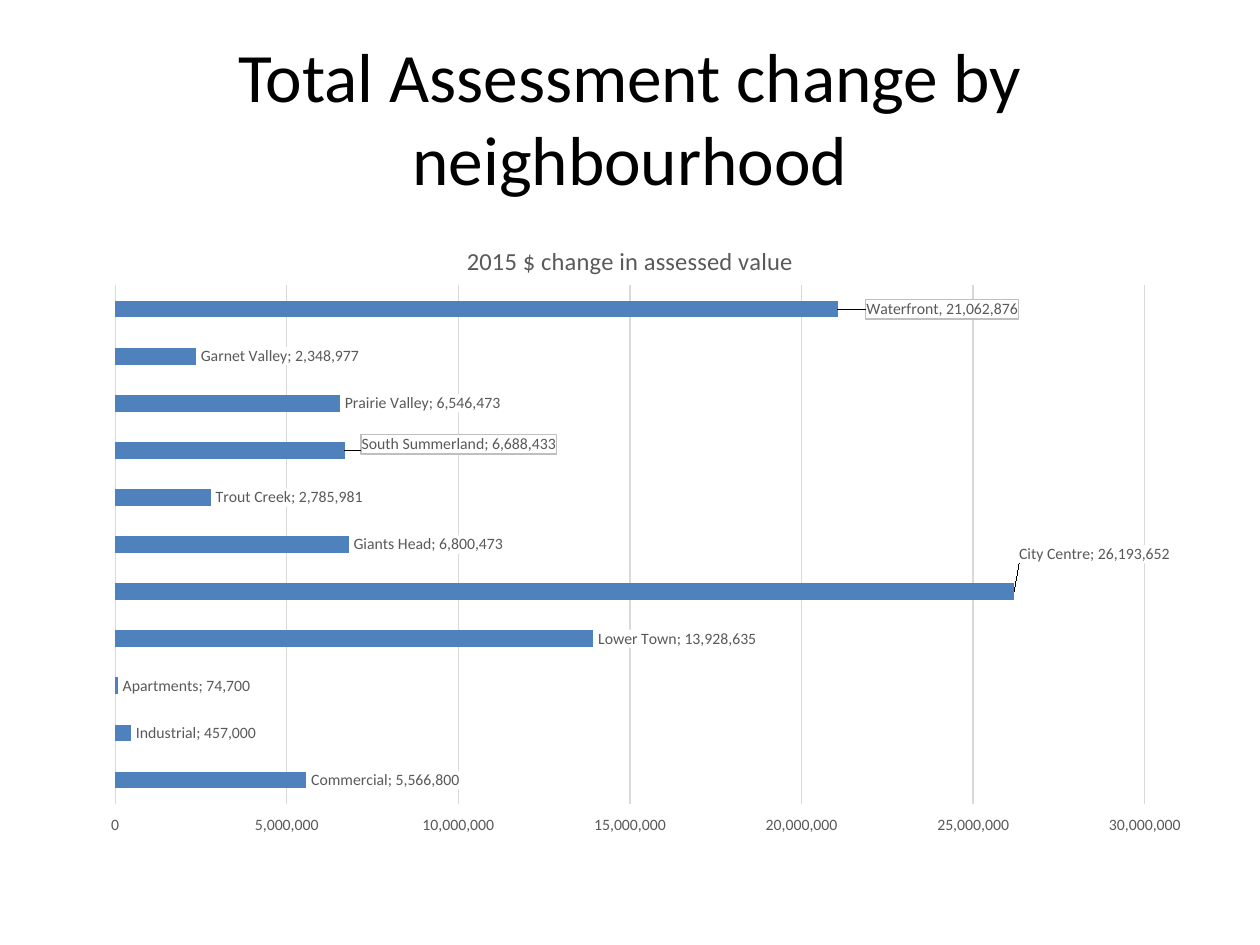
import dataclasses
import pptx
import pptx.chart.data
import pptx.dml.color
import pptx.enum.chart
import pptx.enum.text
import pptx.oxml
import pptx.oxml.ns
import pptx.util

Cm, Pt = pptx.util.Cm, pptx.util.Pt
Rgb = pptx.dml.color.RGBColor.from_string
enum = pptx.enum.chart
NS = pptx.oxml.ns.nsdecls("c", "a")

VALUES = {
    "Commercial": 5566800, "Industrial": 457000, "Apartments": 74700,
    "Lower Town": 13928635, "City Centre": 26193652, "Giants Head": 6800473,
    "Trout Creek": 2785981, "South Summerland": 6688433,
    "Prairie Valley": 6546473, "Garnet Valley": 2348977, "Waterfront": 21062876,
}
# Label shifts as shares of the chart size, and whether the label is boxed
MOVED = {
    "City Centre": (0, -0.06, False),
    "South Summerland": (0.01, -0.01, True),
    "Waterfront": (0.02, 0, True),
}
TYPED = {"Waterfront": "Waterfront, 21,062,876"}


@dataclasses.dataclass
class Theme:
    font: str = "Calibri"
    ink: str = "000000"
    gray: str = "595959"
    grid: str = "D9D9D9"
    edge: str = "BFBFBF"
    bar: str = "4F81BD"
    back: str = "FFFFFF"
    head: float = 39.6
    name: float = 14
    label: float = 9
    number: str = "#,##0"


class Deck:
    def __init__(self, theme):
        self.theme = theme
        self.show = pptx.Presentation()
        self.show.slide_width, self.show.slide_height = Cm(25.4), Cm(19.05)
        self.slide = self.show.slides.add_slide(self.show.slide_layouts[5])

    def style(self, font, size, color):
        font.name, font.size, font.bold = self.theme.font, Pt(size), False
        font.color.rgb = Rgb(color)

    def title(self, text, left, top, width, height):
        box = self.slide.shapes.title
        box.left, box.top, box.width, box.height = map(Cm, (left, top, width, height))
        frame = box.text_frame
        frame.text = text
        frame.vertical_anchor = pptx.enum.text.MSO_ANCHOR.MIDDLE
        line = frame.paragraphs[0]
        line.alignment = pptx.enum.text.PP_ALIGN.CENTER
        self.style(line.font, self.theme.head, self.theme.ink)

    def chart(self, title, values, left, top, width, height):
        theme = self.theme
        data = pptx.chart.data.CategoryChartData(number_format=theme.number)
        data.categories = list(values)
        data.add_series("Series 1", list(values.values()))
        chart = self.slide.shapes.add_chart(
            enum.XL_CHART_TYPE.BAR_CLUSTERED,
            *map(Cm, (left, top, width, height)), data).chart
        self.style(chart.font, 10, theme.ink)
        chart.has_legend = False
        chart.has_title = True
        chart.chart_title.text_frame.text = title
        self.style(chart.chart_title.text_frame.paragraphs[0].font, theme.name, theme.gray)
        self.axes(chart)
        self.place(chart, 0.046, 0.104, 0.908, 0.831)
        plot = chart.plots[0]
        plot.gap_width, plot.vary_by_categories = 182, False
        bars = plot.series[0]
        bars.format.fill.solid()
        bars.format.fill.fore_color.rgb = Rgb(theme.bar)
        self.labels(bars, list(values))

    def axes(self, chart):
        chart.category_axis.visible = False
        axis = chart.value_axis
        axis.minimum_scale, axis.maximum_scale, axis.major_unit = 0, 30e6, 5e6
        axis.major_tick_mark = enum.XL_TICK_MARK.OUTSIDE
        axis.format.line.fill.background()
        axis.has_major_gridlines = True
        line = axis.major_gridlines.format.line
        line.color.rgb, line.width = Rgb(self.theme.grid), Pt(0.75)
        axis.tick_labels.number_format = self.theme.number
        axis.tick_labels.number_format_is_linked = False
        self.style(axis.tick_labels.font, self.theme.label, self.theme.gray)

    def place(self, chart, left, top, width, height):
        """Fix the inner plot area, in shares of the chart size."""
        area = chart._chartSpace.xpath("c:chart/c:plotArea")[0]
        for old in area.xpath("c:layout"):
            area.remove(old)
        area.insert(0, pptx.oxml.parse_xml(
            f'<c:layout {NS}><c:manualLayout><c:layoutTarget val="inner"/>'
            f'<c:xMode val="edge"/><c:yMode val="edge"/><c:x val="{left}"/>'
            f'<c:y val="{top}"/><c:w val="{width}"/><c:h val="{height}"/>'
            '</c:manualLayout></c:layout>'))

    def labels(self, bars, names):
        theme = self.theme
        marks = bars.data_labels
        marks.show_value = marks.show_category_name = True
        marks.number_format, marks.number_format_is_linked = theme.number, False
        marks.position = enum.XL_LABEL_POSITION.OUTSIDE_END
        self.style(marks.font, theme.label, theme.gray)
        self.finish(marks._element, False)
        for name, (right, down, boxed) in MOVED.items():
            spot = names.index(name)
            mark = bars.points[spot].data_label
            if name in TYPED:
                mark.text_frame.text = TYPED[name]
                self.style(mark.text_frame.paragraphs[0].font, theme.label, theme.gray)
            else:
                self.style(mark.font, theme.label, theme.gray)
            mark.position = enum.XL_LABEL_POSITION.OUTSIDE_END
            node = marks._element.xpath(f'c:dLbl[c:idx/@val="{spot}"]')[0]
            node.xpath("c:showCatName")[0].set("val", "1")
            node.xpath("c:idx")[0].addnext(pptx.oxml.parse_xml(
                f'<c:layout {NS}><c:manualLayout><c:x val="{right}"/>'
                f'<c:y val="{down}"/></c:manualLayout></c:layout>'))
            self.finish(node, boxed)

    def finish(self, node, boxed):
        """Give a label node its fill, border and separator."""
        theme = self.theme
        for old in node.xpath("c:spPr | c:separator"):
            node.remove(old)
        edge = (f'<a:ln w="9525"><a:solidFill><a:srgbClr val="{theme.edge}"/>'
                '</a:solidFill></a:ln>' if boxed else '<a:ln><a:noFill/></a:ln>')
        look = pptx.oxml.parse_xml(
            f'<c:spPr {NS}><a:solidFill><a:srgbClr val="{theme.back}"/>'
            f'</a:solidFill>{edge}</c:spPr>')
        node.xpath("c:txPr | c:dLblPos")[0].addprevious(look)
        last = node.xpath("c:showBubbleSize | c:showPercent")[-1]
        last.addnext(pptx.oxml.parse_xml(f'<c:separator {NS}>; </c:separator>'))


def main():
    deck = Deck(Theme())
    deck.title("Total Assessment change by neighbourhood", 1.27, 0.76, 22.86, 3.18)
    deck.chart("2015 $ change in assessed value", VALUES, 1.27, 4.45, 22.86, 12.57)
    deck.show.save("out.pptx")


if __name__ == "__main__":
    main()
